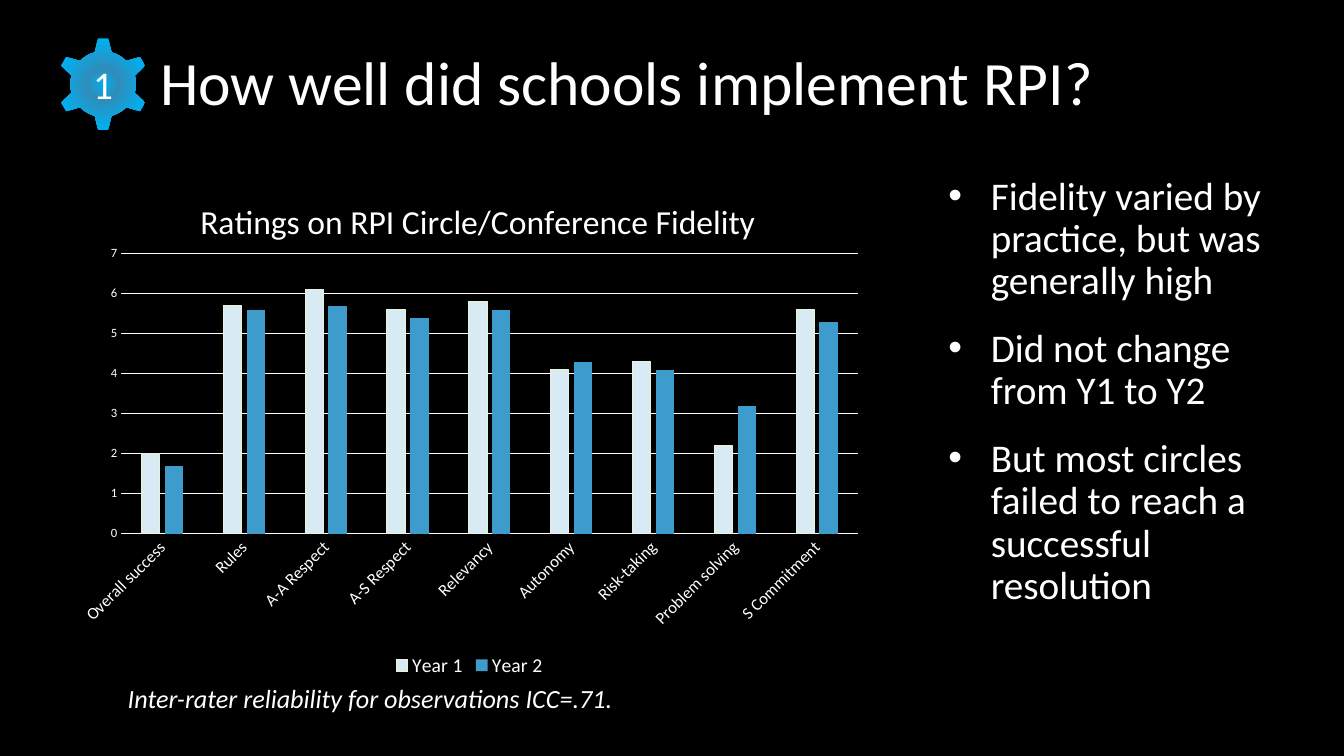
from lxml.etree import SubElement
from pptx import Presentation
from pptx.chart.data import CategoryChartData
from pptx.dml.color import RGBColor
from pptx.enum.chart import XL_CHART_TYPE, XL_LEGEND_POSITION, XL_TICK_MARK
from pptx.enum.shapes import MSO_SHAPE
from pptx.enum.text import MSO_ANCHOR, MSO_AUTO_SIZE, PP_ALIGN
from pptx.oxml import parse_xml
from pptx.oxml.ns import nsdecls, qn
from pptx.util import Cm, Pt

# Content
TITLE = "How well did schools implement RPI?"
NUMBER = "1"
FINDINGS = [
    "Fidelity varied by practice, but was generally high",
    "Did not change from Y1 to Y2",
    "But most circles failed to reach a successful resolution",
]
NOTE = "Inter-rater reliability for observations ICC=.71."
CHART_TITLE = "Ratings on RPI Circle/Conference Fidelity"
RATINGS = [  # practice, Year 1, Year 2
    ("Overall success", 2, 1.7),
    ("Rules", 5.7, 5.6),
    ("A-A Respect", 6.1, 5.7),
    ("A-S Respect", 5.6, 5.4),
    ("Relevancy", 5.8, 5.6),
    ("Autonomy", 4.1, 4.3),
    ("Risk-taking", 4.3, 4.1),
    ("Problem solving", 2.2, 3.2),
    ("S Commitment", 5.6, 5.3),
]

# Style
FONT = "Calibri"
BLACK = RGBColor(0x00, 0x00, 0x00)
WHITE = RGBColor(0xFF, 0xFF, 0xFF)
YEAR_COLORS = [RGBColor(0xD8, 0xEB, 0xF5), RGBColor(0x3D, 0x9C, 0xCC)]
YEAR_1_EDGE = RGBColor(0xEA, 0xF2, 0xDB)
GEAR_BLUE = RGBColor(0x00, 0xB0, 0xF0)
GEAR_DARK = RGBColor(0x31, 0x8D, 0xBB)
GEAR_STOPS = [(0, GEAR_BLUE), (23, GEAR_DARK), (68, GEAR_BLUE), (97, GEAR_BLUE)]


def style_font(font, size):
    font.name = FONT
    font.size = Pt(size)
    font.color.rgb = WHITE


def place(shape, left, top, width, height):
    shape.left, shape.top = Cm(left), Cm(top)
    shape.width, shape.height = Cm(width), Cm(height)


def add_text_box(slide, left, top, width, height):
    frame = slide.shapes.add_textbox(Cm(left), Cm(top), Cm(width), Cm(height)).text_frame
    frame.word_wrap = True
    return frame


def add_bullet(paragraph, indent):
    properties = paragraph._p.get_or_add_pPr()
    properties.set("marL", str(indent))
    properties.set("indent", str(-indent))
    SubElement(properties, qn("a:buFont")).set("typeface", "Arial")
    SubElement(properties, qn("a:buChar")).set("char", "•")


def set_layout(element, **fractions):
    """Fix a chart part's place as fractions of the chart area."""
    for old in element.findall(qn("c:layout")):
        element.remove(old)
    target = '<c:layoutTarget val="inner"/>' if "w" in fractions else ""
    modes = "".join(f'<c:{key}Mode val="edge"/>' for key in fractions if key in "xy")
    values = "".join(f'<c:{key} val="{value}"/>' for key, value in fractions.items())
    layout = parse_xml(
        f'<c:layout {nsdecls("c")}><c:manualLayout>{target}{modes}{values}'
        "</c:manualLayout></c:layout>"
    )
    text = element.find(qn("c:tx"))
    if text is None:
        element.insert(0, layout)
    else:
        text.addnext(layout)


def add_title(slide):
    title = slide.shapes.title
    place(title, 3.78, 0.18, 30.07, 3.94)
    frame = title.text_frame
    frame.text = TITLE
    frame.vertical_anchor = MSO_ANCHOR.MIDDLE
    frame.auto_size = MSO_AUTO_SIZE.NONE
    paragraph = frame.paragraphs[0]
    paragraph.alignment = PP_ALIGN.LEFT
    paragraph.line_spacing = 0.9
    style_font(paragraph.font, 44)


def add_gear(slide):
    gear = slide.shapes.add_shape(MSO_SHAPE.GEAR_6, Cm(1.42), Cm(0.94), Cm(2.36), Cm(2.36))
    gear.shadow.inherit = False
    gear.line.fill.background()
    stops = "".join(
        f'<a:gs pos="{position * 1000}"><a:srgbClr val="{color}"/></a:gs>'
        for position, color in GEAR_STOPS
    )
    gradient = parse_xml(
        f'<a:gradFill {nsdecls("a")} rotWithShape="1"><a:gsLst>{stops}</a:gsLst>'
        '<a:path path="circle"><a:fillToRect l="50000" t="50000" r="50000" b="50000"/>'
        "</a:path></a:gradFill>"
    )
    gear._element.spPr.find(qn("a:prstGeom")).addnext(gradient)
    frame = gear.text_frame
    frame.text = NUMBER
    frame.vertical_anchor = MSO_ANCHOR.MIDDLE
    frame.paragraphs[0].alignment = PP_ALIGN.CENTER
    style_font(frame.paragraphs[0].font, 28)


def add_ratings_chart(slide):
    practices, year_1, year_2 = zip(*RATINGS)
    data = CategoryChartData()
    data.categories = practices
    data.add_series("Year 1", year_1)
    data.add_series("Year 2", year_2)
    chart = slide.shapes.add_chart(
        XL_CHART_TYPE.COLUMN_CLUSTERED, Cm(1.63), Cm(4.34), Cm(20.4), Cm(12.83), data
    ).chart
    style_font(chart.font, 10)

    # Title and plot area
    chart.has_title = True
    chart_title = chart.chart_title
    chart_title.text_frame.text = CHART_TITLE
    title_font = chart_title.text_frame.paragraphs[0].font
    style_font(title_font, 24)
    title_font.bold = False
    chart_title.include_in_layout = False
    set_layout(chart_title._element, x=0.16, y=0.04)
    set_layout(chart.plots[0]._element.getparent(), x=0.07, y=0.16, w=0.91, h=0.55)

    # Legend
    chart.has_legend = True
    chart.legend.position = XL_LEGEND_POSITION.BOTTOM
    chart.legend.include_in_layout = False
    style_font(chart.legend.font, 14)

    # Axes
    categories, values = chart.category_axis, chart.value_axis
    for axis, size in ((categories, 12), (values, 9)):
        axis.major_tick_mark = axis.minor_tick_mark = XL_TICK_MARK.NONE
        style_font(axis.tick_labels.font, size)
    categories._element.find(qn("c:txPr")).find(qn("a:bodyPr")).set("rot", "-2700000")
    values.minimum_scale, values.maximum_scale, values.major_unit = 0, 7, 1
    values.format.line.fill.background()
    for line in (categories.format.line, values.major_gridlines.format.line):
        line.color.rgb = WHITE
        line.width = Pt(0.75)

    # Columns
    plot = chart.plots[0]
    plot.gap_width, plot.overlap = 219, -27
    plot.vary_by_categories = False
    for series, color in zip(plot.series, YEAR_COLORS):
        series.format.fill.solid()
        series.format.fill.fore_color.rgb = color
    edge = plot.series[0].format.line
    edge.color.rgb = YEAR_1_EDGE
    edge.width = Pt(0.75)


def add_findings(slide):
    frame = add_text_box(slide, 23.65, 4.32, 9.35, 11.23)
    for index, finding in enumerate(FINDINGS):
        paragraph = frame.add_paragraph() if index else frame.paragraphs[0]
        paragraph.text = finding
        add_bullet(paragraph, Cm(1.07))
        paragraph.line_spacing = 0.9
        if index:
            paragraph.space_before = Pt(18)
        style_font(paragraph.font, 28)


def add_note(slide):
    paragraph = add_text_box(slide, 2.97, 17.17, 27.91, 1.88).paragraphs[0]
    paragraph.text = NOTE
    paragraph.line_spacing = 0.9
    style_font(paragraph.font, 18.7)
    paragraph.font.italic = True


def main():
    presentation = Presentation()
    presentation.slide_width, presentation.slide_height = Cm(33.87), Cm(19.05)
    slide = presentation.slides.add_slide(presentation.slide_layouts[5])
    slide.background.fill.solid()
    slide.background.fill.fore_color.rgb = BLACK
    add_note(slide)
    add_ratings_chart(slide)
    add_findings(slide)
    add_title(slide)
    add_gear(slide)
    presentation.save("out.pptx")


if __name__ == "__main__":
    main()
